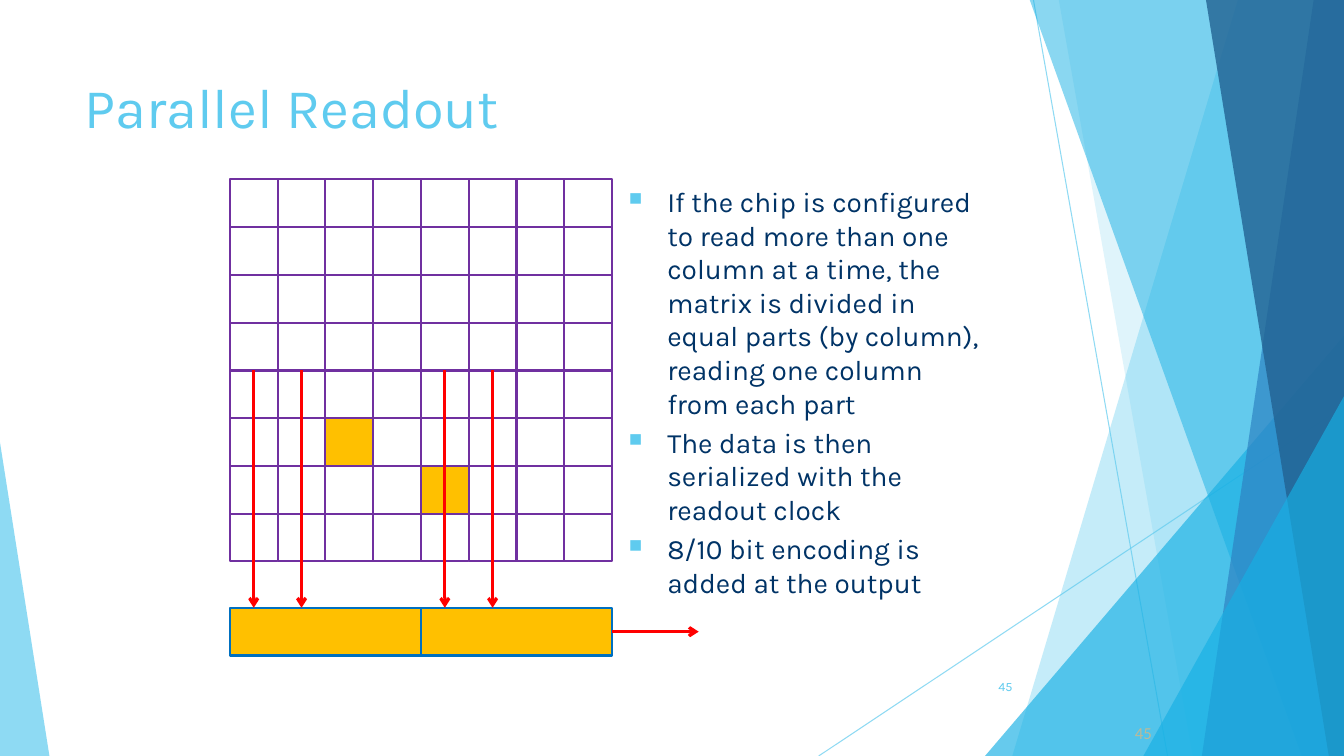
from dataclasses import dataclass

import lxml.etree
import pptx
import pptx.dml.color
import pptx.enum.dml
import pptx.enum.shapes
import pptx.enum.text
import pptx.oxml.ns
import pptx.shapes.autoshape
import pptx.shapes.connector
import pptx.slide
import pptx.util

Inches = pptx.util.Inches
Pt = pptx.util.Pt
RGBColor = pptx.dml.color.RGBColor
ShapeType = pptx.enum.shapes.MSO_SHAPE
Align = pptx.enum.text.PP_ALIGN
Anchor = pptx.enum.text.MSO_ANCHOR
qn = pptx.oxml.ns.qn

SKY = RGBColor(0x5F, 0xCB, 0xEF)
CYAN = RGBColor(0x17, 0xB0, 0xE4)
BLUE = RGBColor(0x2E, 0x83, 0xC3)
DEEP_BLUE = RGBColor(0x22, 0x62, 0x92)
NAVY = RGBColor(0x00, 0x33, 0x66)
SAND = RGBColor(0xBB, 0xBA, 0x99)
WHITE = RGBColor(0xFF, 0xFF, 0xFF)
AMBER = RGBColor(0xFF, 0xC0, 0x00)
PURPLE = RGBColor(0x70, 0x30, 0xA0)
REGISTER_BLUE = RGBColor(0x00, 0x70, 0xC0)
RED = RGBColor(0xFF, 0x00, 0x00)

WIDTH, HEIGHT = 13.33, 7.5
PANEL_TOP = -0.01
GRID_LEFT, GRID_TOP, GRID_SIZE = 2.28, 1.78, 8
CELL = 3.79 / GRID_SIZE
HIT_CELLS = {(5, 2), (6, 4)}  # row, column
REGISTER_TOP = 6.03
ARROW_START_ROW = 3
READ_COLUMNS = (0, 1, 4, 5)

BULLETS = (
    "If the chip is configured to read more than one column at a time, the matrix "
    "is divided in equal parts (by column), reading one column from each part",
    "The data is then serialized with the readout clock",
    "8/10 bit encoding is added at the output",
)


@dataclass(frozen=True)
class Panel:
    """Translucent band running down to the right edge."""
    top_left: float
    bottom_left: float
    color: RGBColor
    opacity: int


@dataclass(frozen=True)
class Wedge:
    """Translucent right-angled triangle standing on the bottom edge."""
    left: float
    top: float
    width: float
    apex: float
    color: RGBColor
    opacity: int


@dataclass(frozen=True)
class Label:
    left: float
    top: float
    width: float
    height: float
    paragraphs: tuple[str, ...]
    size: float
    color: RGBColor
    font: str = "Karla"
    align: Align = Align.LEFT
    anchor: Anchor = Anchor.TOP


# Back to front
DECORATIONS = (
    Panel(12.28, 10.04, SKY, 36),
    Panel(10.5, 11.83, SKY, 20),
    Wedge(9.77, 3.33, 3.56, 1, CYAN, 66),
    Panel(10.21, 12.91, CYAN, 50),
    Panel(13.03, 11.92, BLUE, 70),
    Panel(11.96, 13.18, DEEP_BLUE, 80),
    Wedge(11.34, 3.93, 1.99, 1, CYAN, 66),
    Wedge(0, 4.39, 0.49, 0, SKY, 70),
)
TITLE = Label(0.74, 0.67, 9.4, 1.44, ("Parallel Readout",), 40, SKY)
BODY = Label(6.14, 1.78, 3.7, 4.88, BULLETS, 20, NAVY)
PAGE_NUMBERS = (
    Label(11.09, 6.9, 0.5, 0.52, ("45",), 12, SAND, "Calibri", Align.CENTER, Anchor.BOTTOM),
    Label(9.39, 6.61, 0.75, 0.4, ("45",), 9, SKY, align=Align.RIGHT, anchor=Anchor.MIDDLE),
)


def set_opacity(parent: lxml.etree._Element, percent: int) -> None:
    color = parent.find(qn("a:solidFill"))[0]
    lxml.etree.SubElement(color, qn("a:alpha"), val=str(percent * 1000))


def add_line(slide: pptx.slide.Slide, start: tuple[float, float], end: tuple[float, float],
             color: RGBColor, width: float) -> pptx.shapes.connector.Connector:
    connector = slide.shapes.add_connector(
        pptx.enum.shapes.MSO_CONNECTOR.STRAIGHT, *map(Inches, start + end))
    connector.line.color.rgb = color
    connector.line.width = Pt(width)
    lxml.etree.SubElement(connector._element.spPr, qn("a:effectLst"))
    return connector


def add_arrow(slide: pptx.slide.Slide, source: pptx.shapes.autoshape.Shape, site: int,
              start: tuple[float, float], end: tuple[float, float]) -> None:
    arrow = add_line(slide, start, end, RED, 2.25)
    arrow.begin_connect(source, site)
    line = arrow._element.spPr.find(qn("a:ln"))
    lxml.etree.SubElement(line, qn("a:tailEnd"), type="arrow")


def add_box(slide: pptx.slide.Slide, left: float, top: float, width: float,
            fill: RGBColor, outline: RGBColor) -> pptx.shapes.autoshape.Shape:
    shape = slide.shapes.add_shape(
        ShapeType.RECTANGLE, *map(Inches, (left, top, width, CELL)))
    shape.shadow.inherit = False
    shape.fill.solid()
    shape.fill.fore_color.rgb = fill
    shape.line.color.rgb = outline
    shape.line.width = Pt(1.5)
    return shape


def add_decoration(slide: pptx.slide.Slide, item: Panel | Wedge) -> None:
    if isinstance(item, Panel):
        builder = slide.shapes.build_freeform(Inches(item.top_left), Inches(PANEL_TOP))
        corners = ((WIDTH, PANEL_TOP), (WIDTH, HEIGHT), (item.bottom_left, HEIGHT))
        builder.add_line_segments([(Inches(x), Inches(y)) for x, y in corners], close=True)
        shape = builder.convert_to_shape()
    else:
        shape = slide.shapes.add_shape(
            ShapeType.ISOSCELES_TRIANGLE,
            *map(Inches, (item.left, item.top, item.width, HEIGHT - item.top)))
        shape.adjustments[0] = item.apex
    shape.shadow.inherit = False
    shape.fill.solid()
    shape.fill.fore_color.rgb = item.color
    shape.line.fill.background()
    set_opacity(shape._element.spPr, item.opacity)


def add_bullet(paragraph: pptx.text.text._Paragraph) -> None:
    properties = paragraph._p.get_or_add_pPr()
    properties.set("marL", str(Inches(0.38)))
    properties.set("indent", str(Inches(-0.38)))
    color = lxml.etree.SubElement(properties, qn("a:buClr"))
    lxml.etree.SubElement(color, qn("a:srgbClr"), val=str(SKY))
    lxml.etree.SubElement(properties, qn("a:buSzPct"), val="65000")
    lxml.etree.SubElement(properties, qn("a:buChar"), char="■")


def add_label(slide: pptx.slide.Slide, label: Label, bulleted: bool = False) -> None:
    box = slide.shapes.add_textbox(
        *map(Inches, (label.left, label.top, label.width, label.height)))
    text_frame = box.text_frame
    text_frame.word_wrap = True
    text_frame.vertical_anchor = label.anchor
    text_frame.text = "\n".join(label.paragraphs)
    for index, paragraph in enumerate(text_frame.paragraphs):
        paragraph.alignment = label.align
        if index:
            paragraph.space_before = Pt(label.size * 0.2)
        if bulleted:
            add_bullet(paragraph)
        for run in paragraph.runs:
            run.font.name = label.font
            run.font.size = Pt(label.size)
            run.font.color.rgb = label.color


def add_readout(slide: pptx.slide.Slide) -> None:
    # Pixel matrix
    cells = {}
    for row in range(GRID_SIZE):
        for column in range(GRID_SIZE):
            fill = AMBER if (row, column) in HIT_CELLS else WHITE
            cells[row, column] = add_box(
                slide, GRID_LEFT + column * CELL, GRID_TOP + row * CELL, CELL, fill, PURPLE)

    # Output registers, one for each half of the matrix
    half = CELL * GRID_SIZE / 2
    registers = [add_box(slide, GRID_LEFT + part * half, REGISTER_TOP, half,
                         AMBER, REGISTER_BLUE) for part in range(2)]

    # Column readout and serial output
    start_y = GRID_TOP + (ARROW_START_ROW + 1) * CELL
    for column in READ_COLUMNS:
        x = GRID_LEFT + (column + 0.5) * CELL
        add_arrow(slide, cells[ARROW_START_ROW, column], 2, (x, start_y), (x, REGISTER_TOP))
    output_y = REGISTER_TOP + CELL / 2
    add_arrow(slide, registers[-1], 3, (GRID_LEFT + 2 * half, output_y), (6.93, output_y))


def main() -> None:
    presentation = pptx.Presentation()
    presentation.slide_width = Inches(WIDTH)
    presentation.slide_height = Inches(HEIGHT)
    slide = presentation.slides.add_slide(presentation.slide_layouts[6])

    # Background
    for start, end in (((10.25, 0), (11.58, HEIGHT)), ((WIDTH, 4.03), (8.12, HEIGHT))):
        line = add_line(slide, start, end, SKY, 0.75)
        set_opacity(line._element.spPr.find(qn("a:ln")), 70)
    for item in DECORATIONS:
        add_decoration(slide, item)

    # Content
    add_label(slide, TITLE)
    add_readout(slide)
    add_label(slide, BODY, bulleted=True)
    for number in PAGE_NUMBERS:
        add_label(slide, number)

    presentation.save("out.pptx")


if __name__ == "__main__":
    main()
